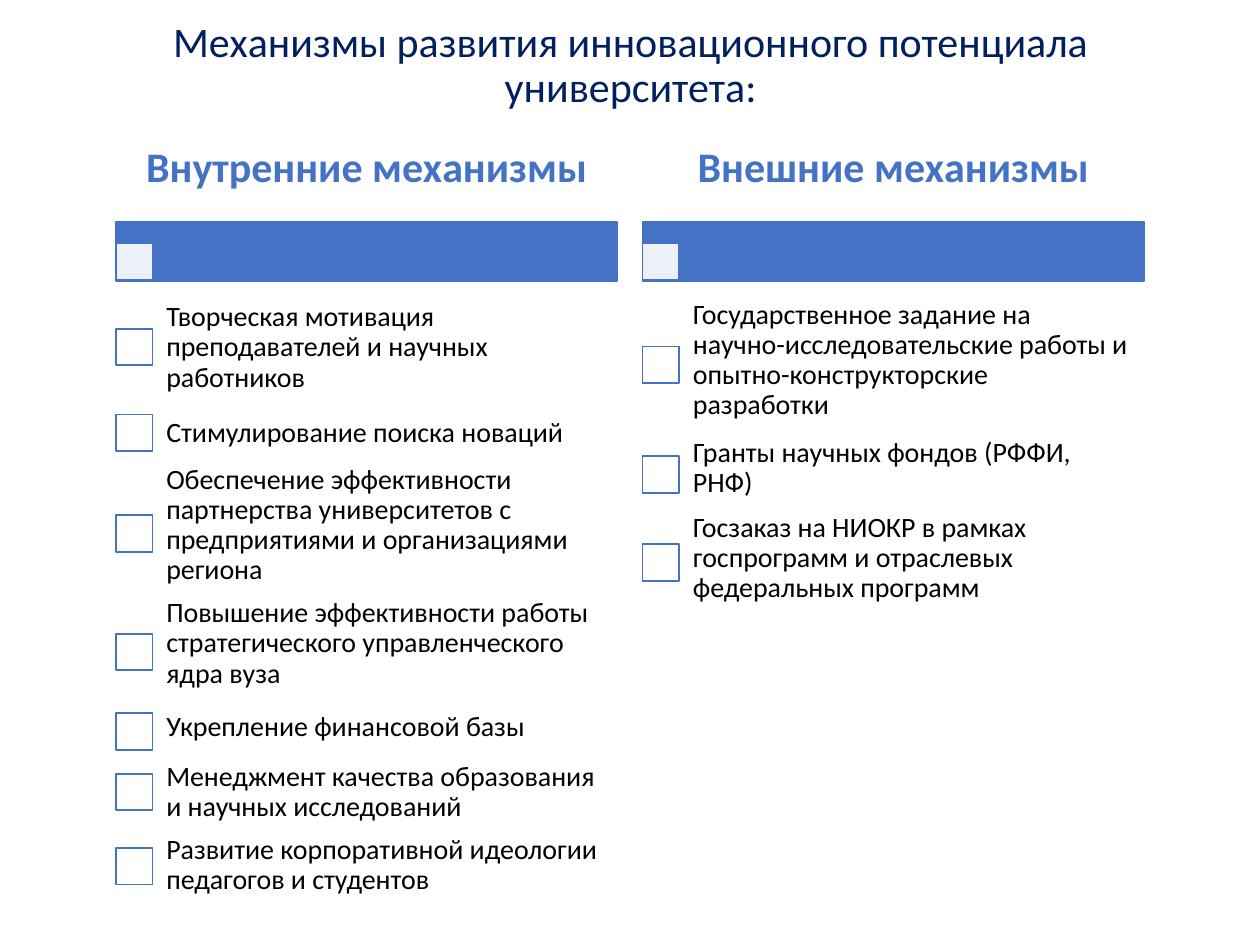
from lxml import etree
from pptx import Presentation
from pptx.dml.color import RGBColor
from pptx.enum.shapes import MSO_SHAPE
from pptx.enum.text import MSO_ANCHOR, PP_ALIGN
from pptx.oxml.ns import qn
from pptx.util import Inches, Pt

RECTANGLE = MSO_SHAPE.RECTANGLE
MIDDLE = MSO_ANCHOR.MIDDLE
LEFT, CENTER = PP_ALIGN.LEFT, PP_ALIGN.CENTER

FONT = "Calibri"
BLUE, NAVY, BLACK, WHITE = "4472C4", "002060", "000000", "FFFFFF"

# Content: each item is (checkbox top, text top, text)
TITLE = "Механизмы развития инновационного потенциала университета:"
COLUMNS = [
    ("Внутренние механизмы", [
        (2.61, 2.42, "Творческая мотивация преподавателей и научных работников"),
        (3.29, 3.10, "Стимулирование поиска новаций"),
        (4.09, 3.83, "Обеспечение эффективности партнерства университетов с "
                     "предприятиями и организациями региона"),
        (5.03, 4.77, "Повышение эффективности работы стратегического "
                     "управленческого ядра вуза"),
        (5.66, 5.43, "Укрепление финансовой базы"),
        (6.14, 5.95, "Менеджмент качества образования и научных исследований"),
        (6.73, 6.53, "Развитие корпоративной идеологии педагогов и студентов"),
    ]),
    ("Внешние механизмы", [
        (2.75, 2.52, "Государственное задание на научно-исследовательские работы "
                     "и опытно-конструкторские разработки"),
        (3.62, 3.38, "Гранты научных фондов (РФФИ, РНФ)"),
        (4.32, 4.09, "Госзаказ на НИОКР в рамках госпрограмм и отраслевых "
                     "федеральных программ"),
    ]),
]

# Layout in inches
COLUMN_LEFT, COLUMN_WIDTH, COLUMN_STEP = 0.92, 3.98, 4.18
HEADING_TOP, HEADING_HEIGHT = 0.92, 0.84
BAR_TOP, BAR_HEIGHT = 1.76, 0.47
BOX_SIZE, BAR_BOX_TOP = 0.29, 1.93
TEXT_INDENT, TEXT_HEIGHT = 0.28, 0.68


def color(value):
    return RGBColor.from_string(value)


def add_rectangle(slide, left, top, width, height, fill, opacity=100):
    shape = slide.shapes.add_shape(
        RECTANGLE, Inches(left), Inches(top), Inches(width), Inches(height))
    shape.shadow.inherit = False
    shape.fill.solid()
    shape.fill.fore_color.rgb = color(fill)
    shape.line.color.rgb = color(BLUE)
    shape.line.width = Pt(1)
    if opacity < 100:
        fill_color = shape.fill._xPr.find(qn("a:solidFill"))[0]
        etree.SubElement(fill_color, qn("a:alpha"), val=str(opacity * 1000))


def add_text(slide, text, left, top, width, height, size=16, text_color=BLACK,
             bold=False, align=LEFT, margins=(0.12, 0.12)):
    shape = slide.shapes.add_textbox(
        Inches(left), Inches(top), Inches(width), Inches(height))
    frame = shape.text_frame
    frame.word_wrap = True
    frame.vertical_anchor = MIDDLE
    frame.margin_left = frame.margin_right = Inches(margins[0])
    frame.margin_top = frame.margin_bottom = Inches(margins[1])
    paragraph = frame.paragraphs[0]
    paragraph.alignment = align
    paragraph.line_spacing = 0.9
    run = paragraph.add_run()
    run.text = text
    run.font.name = FONT
    run.font.size = Pt(size)
    run.font.bold = bold
    run.font.color.rgb = color(text_color)


def add_column(slide, left, heading, items):
    # Header bar with its small box, and the heading above
    add_rectangle(slide, left, BAR_TOP, COLUMN_WIDTH, BAR_HEIGHT, BLUE)
    add_rectangle(slide, left, BAR_BOX_TOP, BOX_SIZE, BOX_SIZE, WHITE, opacity=90)
    add_text(slide, heading, left, HEADING_TOP, COLUMN_WIDTH, HEADING_HEIGHT,
             size=24, text_color=BLUE, bold=True, align=CENTER,
             margins=(0.05, 0.03))
    # Checklist
    for box_top, text_top, text in items:
        add_rectangle(slide, left, box_top, BOX_SIZE, BOX_SIZE, WHITE)
        add_text(slide, text, left + TEXT_INDENT, text_top,
                 COLUMN_WIDTH - TEXT_INDENT, TEXT_HEIGHT)


def main():
    presentation = Presentation()
    presentation.slide_width = Inches(10)
    presentation.slide_height = Inches(7.5)
    slide = presentation.slides.add_slide(presentation.slide_layouts[6])
    for index, (heading, items) in enumerate(COLUMNS):
        add_column(slide, COLUMN_LEFT + index * COLUMN_STEP, heading, items)
    add_text(slide, TITLE, 0.28, 0.13, 9.45, 0.79, size=24, text_color=NAVY,
             align=CENTER, margins=(0.1, 0.05))
    presentation.save("out.pptx")


if __name__ == "__main__":
    main()
